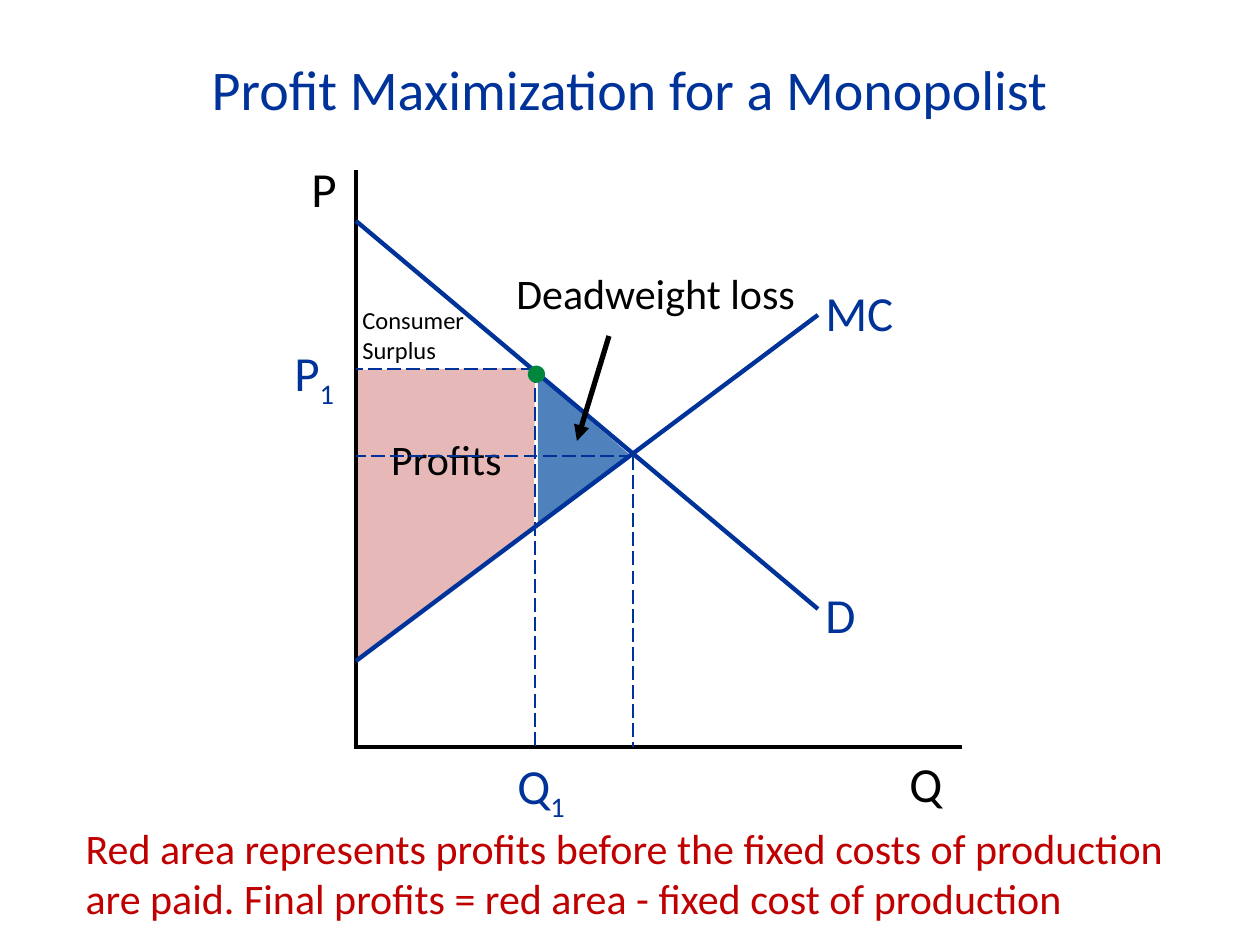
import pptx
import pptx.util
import pptx.dml.color
import pptx.enum.dml
import pptx.enum.shapes
import pptx.enum.text
from pptx.oxml.ns import qn
from lxml import etree

PX = 914400 // 126
RGB = pptx.dml.color.RGBColor
NAVY = RGB(0x00, 0x33, 0x99)
BLACK = RGB(0x00, 0x00, 0x00)
RED = RGB(0xC0, 0x00, 0x00)
PINK = RGB(0xE6, 0xB9, 0xB8)
BLUE = RGB(0x4F, 0x81, 0xBD)
GREEN = RGB(0x00, 0x86, 0x3D)
ALIGN = pptx.enum.text.PP_ALIGN
ANCHOR = pptx.enum.text.MSO_ANCHOR
FONT = "Calibri"

# Content: places are px (left, top, width, height)
TITLE = ("Profit Maximization for a Monopolist", (88, 48, 1084, 81))
NOTE = (["Red area represents profits before the fixed costs of production",
         "are paid. Final profits = red area - fixed cost of production"],
        (73, 816, 1189, 165))

# Key points of the diagram
AXIS_X, AXIS_Y = 356, 747
PRICE_Y, MONOPOLY_X = 369, 535
MARKET_X, MARKET_Y = 633, 456

DEADWEIGHT_AREA = [(538, 523), (538, 375), (630, 455)]
PROFIT_AREA = [(358, 658), (358, 370), (535, 368), (534, 525)]

# start, end, colour, width in pt, style
LINES = [
    ((AXIS_X, 170), (AXIS_X, 749), BLACK, 2.5, None),
    ((AXIS_X, AXIS_Y), (962, AXIS_Y), BLACK, 2.5, None),
    ((AXIS_X, 221), (818, 609), NAVY, 2.5, None),
    ((AXIS_X, 661), (818, 315), NAVY, 2.5, None),
    ((MONOPOLY_X, PRICE_Y), (AXIS_X, PRICE_Y), NAVY, 1, "dash"),
    ((MONOPOLY_X, PRICE_Y), (MONOPOLY_X, AXIS_Y), NAVY, 1, "dash"),
    ((MARKET_X, MARKET_Y), (MARKET_X, AXIS_Y), NAVY, 1, "dash"),
    ((MARKET_X, MARKET_Y), (AXIS_X, MARKET_Y), NAVY, 1, "dash"),
    ((609, 336), (577, 441), BLACK, 3, "arrow"),
]

# lines of text, subscript, place, size in pt, colour, line spacing, wrap
LABELS = [
    (["Q"], "1", (505, 756, 81, 60), 28, NAVY, 0.8, True),
    (["Q"], "", (897, 747, 60, 72), 28, BLACK, None, True),
    (["P"], "", (299, 164, 57, 62), 28, BLACK, 0.8, True),
    (["D"], "", (813, 578, 116, 72), 28, NAVY, None, True),
    (["P"], "1", (282, 343, 68, 62), 28, NAVY, 0.8, True),
    (["MC"], "", (813, 276, 116, 72), 28, NAVY, None, True),
    (["Consumer", "Surplus"], "", (350, 299, 129, 111), 14, BLACK, None, False),
    (["Deadweight loss"], "", (504, 261, 306, 102), 24, BLACK, None, False),
    (["•"], "", (512, 333, 60, 74), 28, GREEN, None, True),
]


def put(box, place):
    box.left, box.top, box.width, box.height = [v * PX for v in place]


def add_span(para, text, size, colour):
    span = para.add_run()
    span.text = text
    span.font.name = FONT
    span.font.size = pptx.util.Pt(size)
    span.font.color.rgb = colour
    return span


def write(frame, texts, size, colour, align=None):
    for i, text in enumerate(texts):
        para = frame.paragraphs[0] if i == 0 else frame.add_paragraph()
        para.alignment = align
        add_span(para, text, size, colour)
    return frame.paragraphs


def add_area(page, points, colour):
    builder = page.shapes.build_freeform(*points[0], scale=PX)
    builder.add_line_segments(points[1:], close=True)
    area = builder.convert_to_shape()
    area.shadow.inherit = False
    area.fill.solid()
    area.fill.fore_color.rgb = colour
    area.line.fill.background()
    return area


def add_line(page, start, end, colour, width, style):
    line = page.shapes.add_connector(
        pptx.enum.shapes.MSO_CONNECTOR.STRAIGHT,
        *[v * PX for v in start + end])
    line.line.color.rgb = colour
    line.line.width = pptx.util.Pt(width)
    if style == "dash":
        line.line.dash_style = pptx.enum.dml.MSO_LINE.LONG_DASH
    if style == "arrow":
        etree.SubElement(line.line._get_or_add_ln(), qn("a:tailEnd"), type="triangle")
    etree.SubElement(line._element.spPr, qn("a:effectLst"))


def add_label(page, texts, subscript, place, size, colour, spacing, wrap):
    box = page.shapes.add_textbox(*[v * PX for v in place])
    box.text_frame.word_wrap = wrap
    paras = write(box.text_frame, texts, size, colour)
    for para in paras:
        para.line_spacing = spacing
    if subscript:
        span = add_span(paras[-1], subscript, size, colour)
        span.font._element.set("baseline", "-25000")


def main():
    deck = pptx.Presentation()
    deck.slide_width, deck.slide_height = 1260 * PX, 945 * PX
    page = deck.slides.add_slide(deck.slide_layouts[1])

    # Title and note
    title, note = page.shapes.title, page.placeholders[1]
    for box, place in ((title, TITLE[1]), (note, NOTE[1])):
        put(box, place)
        box.text_frame.auto_size = pptx.enum.text.MSO_AUTO_SIZE.NONE
    title.text_frame.vertical_anchor = ANCHOR.MIDDLE
    write(title.text_frame, [TITLE[0]], 32, NAVY, ALIGN.CENTER)
    for para in write(note.text_frame, NOTE[0], 24, RED, ALIGN.LEFT):
        para.space_before = pptx.util.Pt(0)
        props = para._p.get_or_add_pPr()
        props.set("marL", "0")
        props.set("indent", "0")
        etree.SubElement(props, qn("a:buNone"))

    # Shaded areas, the profit label raised by its bottom margin
    add_area(page, DEADWEIGHT_AREA, BLUE)
    frame = add_area(page, PROFIT_AREA, PINK).text_frame
    frame.vertical_anchor = ANCHOR.MIDDLE
    frame.margin_bottom = 114 * PX
    write(frame, ["Profits"], 24, BLACK, ALIGN.CENTER)

    # Axes, curves, guides and labels
    for line in LINES:
        add_line(page, *line)
    for label in LABELS:
        add_label(page, *label)

    deck.save("out.pptx")


if __name__ == "__main__":
    main()
